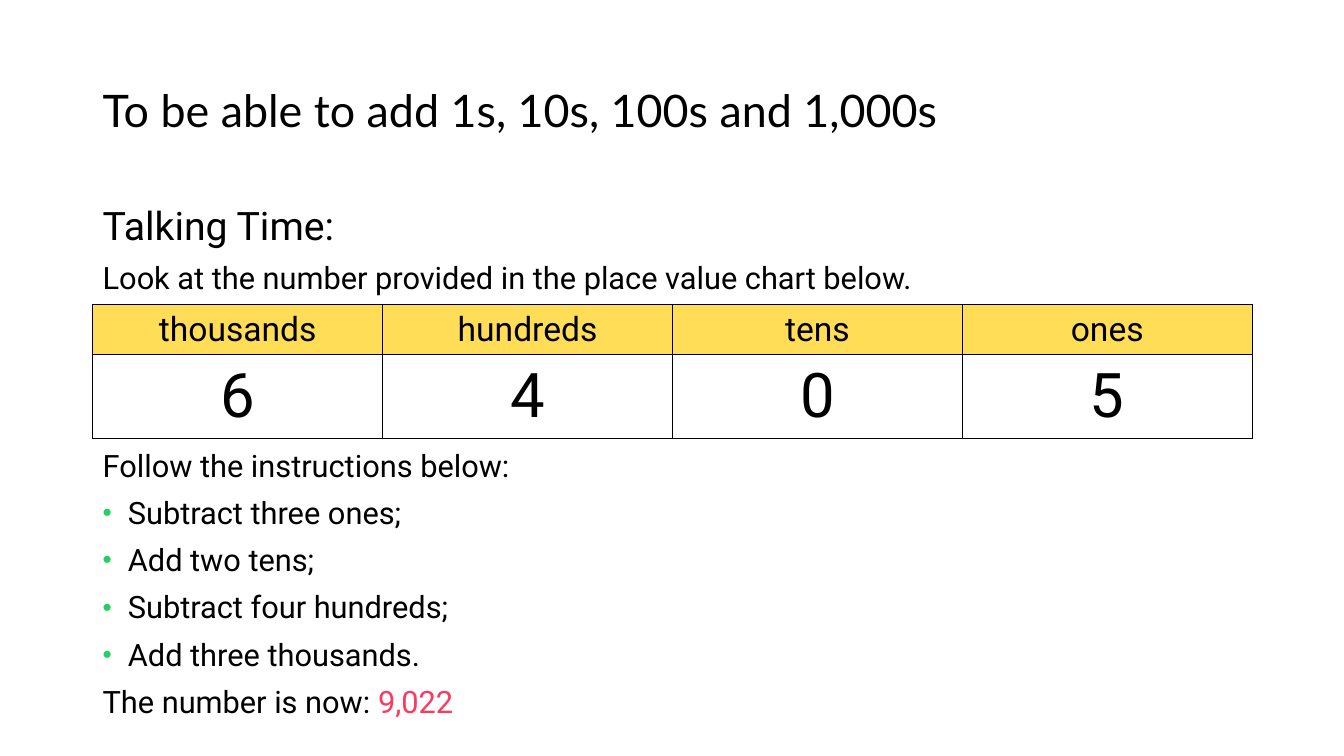
from lxml.etree import SubElement
from pptx import Presentation
from pptx.dml.color import RGBColor
from pptx.enum.text import MSO_ANCHOR as Anchor, PP_ALIGN as Align
from pptx.oxml.ns import qn
from pptx.util import Inches, Pt

BLACK, WHITE, YELLOW, GREEN, PINK = "000000", "FFFFFF", "FFDD57", "23D160", "FF3860"
LEFT, WIDTH = Inches(0.92), Inches(11.5)


def style(font, size, color=BLACK, name="Roboto"):
    font.size, font.name = Pt(size), name
    font.color.rgb = RGBColor.from_string(color)


def add_text(top, width, height, lines, anchor=Anchor.TOP):
    box = page.shapes.add_textbox(LEFT, Inches(top), width, Inches(height))
    frame = box.text_frame
    frame.word_wrap, frame.vertical_anchor = True, anchor
    for index, (text, size, name, bulleted) in enumerate(lines):
        para = frame.paragraphs[0] if index == 0 else frame.add_paragraph()
        para.line_spacing = 0.9
        if index:
            para.space_before = Pt(10)
        if bulleted:
            props = para._p.get_or_add_pPr()
            props.set("marL", str(Inches(0.25)))
            props.set("indent", str(-Inches(0.25)))
            SubElement(SubElement(props, qn("a:buClr")), qn("a:srgbClr"), val=GREEN)
            SubElement(props, qn("a:buSzPct"), val="85000")
            SubElement(props, qn("a:buFont"), typeface="Arial")
            SubElement(props, qn("a:buChar"), char="•")
        para.add_run().text = text
        style(para.font, size, name=name)
    return frame


deck = Presentation()
deck.slide_width, deck.slide_height = Inches(13.33), Inches(7.5)
page = deck.slides.add_slide(deck.slide_layouts[6])
page.background.fill.solid()
page.background.fill.fore_color.rgb = RGBColor.from_string(WHITE)

add_text(0.4, Inches(9.6), 1.45,
         [("To be able to add 1s, 10s, 100s and 1,000s", 32, "Lato", False)],
         Anchor.MIDDLE)
add_text(2, WIDTH, 1, [
    ("Talking Time:", 28, "Roboto", False),
    ("Look at the number provided in the place value chart below.", 22, "Roboto", False),
])

steps = ["Subtract three ones;", "Add two tens;",
         "Subtract four hundreds;", "Add three thousands."]
instructions = add_text(4.42, WIDTH, 2.8, [
    ("Follow the instructions below:", 22, "Roboto", False),
    *((step, 22, "Roboto", True) for step in steps),
    ("The number is now: ", 22, "Roboto", False),
])
answer = instructions.paragraphs[-1].add_run()
answer.text = "9,022"
answer.font.color.rgb = RGBColor.from_string(PINK)

place_values = [
    (["thousands", "hundreds", "tens", "ones"], 0.49, 24, YELLOW, Anchor.MIDDLE),
    (["6", "4", "0", "5"], 0.82, 44, WHITE, Anchor.TOP),
]
table = page.shapes.add_table(2, 4, LEFT, Inches(3.02), WIDTH, Inches(1.31)).table
for row, (labels, height, size, fill, anchor) in enumerate(place_values):
    table.rows[row].height = Inches(height)
    for column, label in enumerate(labels):
        cell = table.cell(row, column)
        cell.text, cell.vertical_anchor = label, anchor
        para = cell.text_frame.paragraphs[0]
        para.alignment = Align.CENTER
        style(para.font, size)
        props = cell._tc.get_or_add_tcPr()
        for side in ("lnL", "lnR", "lnT", "lnB"):
            border = SubElement(props, qn(f"a:{side}"), w=str(Pt(1)))
            SubElement(SubElement(border, qn("a:solidFill")), qn("a:srgbClr"), val=BLACK)
        cell.fill.solid()
        cell.fill.fore_color.rgb = RGBColor.from_string(fill)

deck.save("out.pptx")
